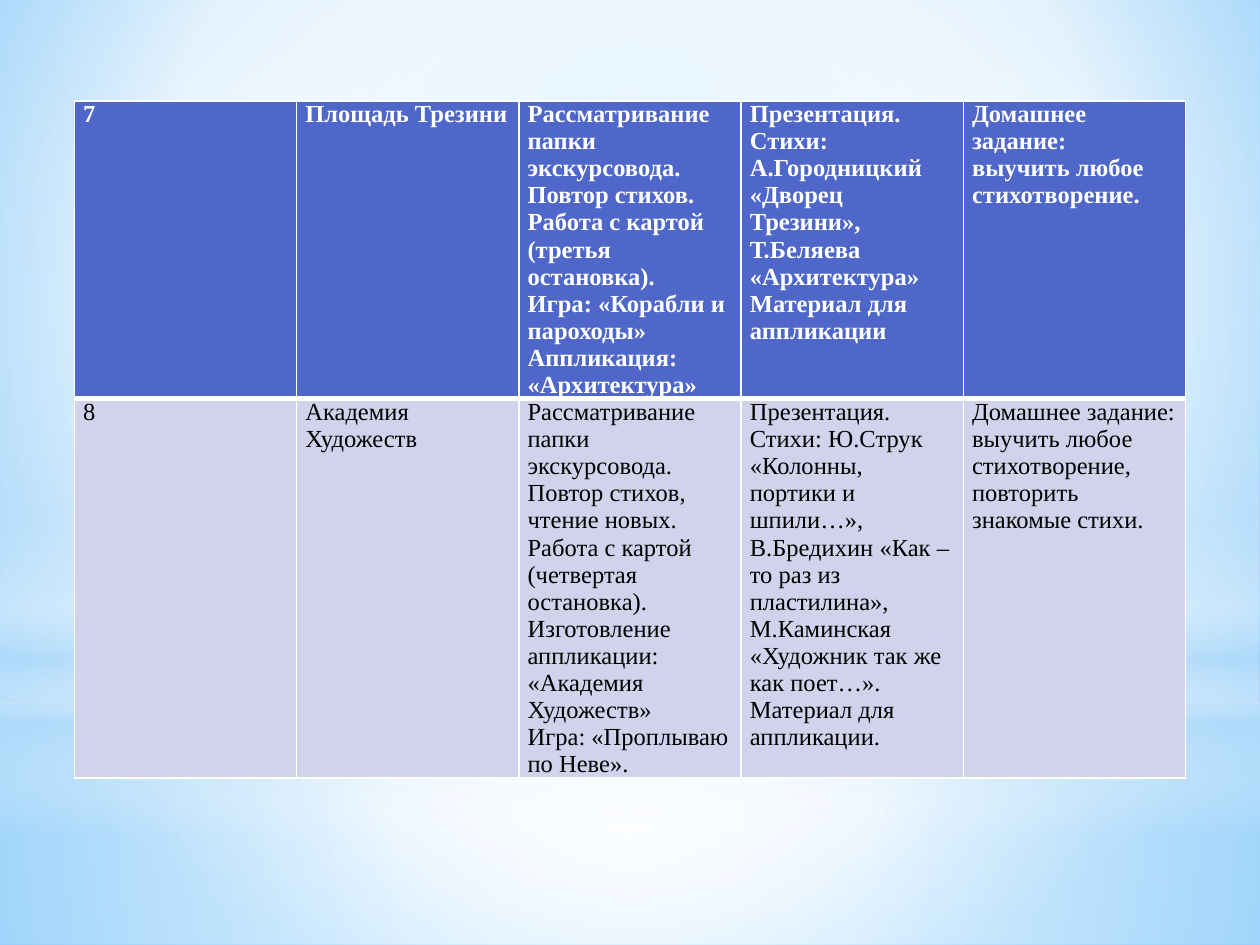
import lxml.etree
import pptx
import pptx.dml.color
import pptx.enum.shapes
import pptx.oxml.ns
import pptx.util
from pptx.util import Inches

COLORS = {
    "white": "FFFFFF", "black": "000000", "header": "4E67C8", "body": "D0D3EB",
    "haze": "B4DCFA", "sky": "9ED5FF", "deep": "5BB9FF",
}
FONT = "Times New Roman"
CENTER = (50, 50, 50, 50)
qn = pptx.oxml.ns.qn


def set_gradient(element, stops, focus):
    solid = element.find(".//" + qn("a:solidFill"))
    gradient = lxml.etree.Element(qn("a:gradFill"), rotWithShape="1")
    stop_list = lxml.etree.SubElement(gradient, qn("a:gsLst"))
    for position, color, alpha in stops:
        stop = lxml.etree.SubElement(stop_list, qn("a:gs"), pos=str(position * 1000))
        value = lxml.etree.SubElement(stop, qn("a:srgbClr"), val=COLORS[color])
        if alpha < 100:
            lxml.etree.SubElement(value, qn("a:alpha"), val=str(alpha * 1000))
    if focus:
        circle = lxml.etree.SubElement(gradient, qn("a:path"), path="circle")
        edges = {side: str(share * 1000) for side, share in zip("ltrb", focus)}
        lxml.etree.SubElement(circle, qn("a:fillToRect"), **edges)
    else:
        lxml.etree.SubElement(gradient, qn("a:lin"), ang="5400000", scaled="0")
    solid.getparent().replace(solid, gradient)


def set_borders(cell, widths):
    properties = cell._tc.get_or_add_tcPr()
    for index, (side, width) in enumerate(zip("LRTB", widths)):
        line = lxml.etree.Element(qn("a:ln" + side), w=str(pptx.util.Pt(width)))
        fill = lxml.etree.SubElement(line, qn("a:solidFill"))
        lxml.etree.SubElement(fill, qn("a:srgbClr"), val=COLORS["white"])
        properties.insert(index, line)


presentation = pptx.Presentation()
presentation.slide_width = Inches(10)
presentation.slide_height = Inches(7.5)
slide = presentation.slides.add_slide(presentation.slide_layouts[6])

slide.background.fill.solid()
set_gradient(
    slide.element,
    [(0, "sky", 100), (60, "white", 100), (100, "deep", 100)],
    (20, 10, 20, 60),
)

rectangle = pptx.enum.shapes.MSO_SHAPE.RECTANGLE
oval = pptx.enum.shapes.MSO_SHAPE.OVAL
glows = [
    (rectangle, 5.58, 1.92, CENTER,
     [(0, "white", 91), (37, "white", 76), (100, "haze", 79)]),
    (rectangle, 0, 5.58, CENTER,
     [(0, "white", 89), (48, "white", 62), (100, "haze", 79)]),
    (rectangle, 4.12, 2.5, None,
     [(0, "white", 0), (29, "white", 30), (45, "haze", 40),
      (55, "white", 26), (65, "haze", 60), (100, "white", 0)]),
    (oval, 1.75, 5.58, CENTER, [(0, "white", 100), (56, "white", 0)]),
]
for kind, top, height, focus, stops in glows:
    shape = slide.shapes.add_shape(kind, 0, Inches(top), Inches(10), Inches(height))
    shape.shadow.inherit = False
    shape.line.fill.background()
    shape.fill.solid()
    set_gradient(shape.element, stops, focus)

lessons = [
    [
        "7",
        "Площадь Трезини",
        "Рассматривание папки экскурсовода.\nПовтор стихов.\n"
        "Работа с картой (третья остановка).\nИгра: «Корабли и пароходы»\n"
        "Аппликация: «Архитектура»",
        "Презентация.\nСтихи: А.Городницкий «Дворец Трезини», "
        "Т.Беляева «Архитектура»\nМатериал для аппликации",
        "Домашнее задание:\nвыучить любое\nстихотворение.",
    ],
    [
        "8",
        "Академия Художеств",
        "Рассматривание папки экскурсовода.\nПовтор стихов, чтение новых.\n"
        "Работа с картой (четвертая остановка).\n"
        "Изготовление аппликации: «Академия Художеств»\n"
        "Игра: «Проплываю по Неве».",
        "Презентация.\nСтихи: Ю.Струк «Колонны, портики и шпили…», "
        "В.Бредихин «Как – то раз из пластилина», "
        "М.Каминская «Художник так же как поет…».\nМатериал для аппликации.",
        "Домашнее задание:\nвыучить любое\nстихотворение, повторить знакомые стихи.",
    ],
]
row_styles = [
    ("header", "white", True, (1, 1, 1, 3)),
    ("body", "black", False, (1, 1, 3, 1)),
]

table_frame = slide.shapes.add_table(
    2, 5, Inches(0.59), Inches(0.8), Inches(8.82), Inches(5.83)
)
table = table_frame.table
for column in table.columns:
    column.width = Inches(8.82 / 5)
for row, texts, (fill, ink, bold, widths) in zip(table.rows, lessons, row_styles):
    row.height = Inches(0.41)
    for cell, text in zip(row.cells, texts):
        cell.margin_left = cell.margin_right = Inches(0.07)
        cell.margin_top = cell.margin_bottom = 0
        cell.fill.solid()
        cell.fill.fore_color.rgb = pptx.dml.color.RGBColor.from_string(COLORS[fill])
        set_borders(cell, widths)
        cell.text_frame.text = text
        for paragraph in cell.text_frame.paragraphs:
            for run in paragraph.runs:
                run.font.name = FONT
                run.font.size = pptx.util.Pt(14)
                run.font.bold = bold
                run.font.color.rgb = pptx.dml.color.RGBColor.from_string(COLORS[ink])
table_frame.height = Inches(5.83)

presentation.save("out.pptx")
